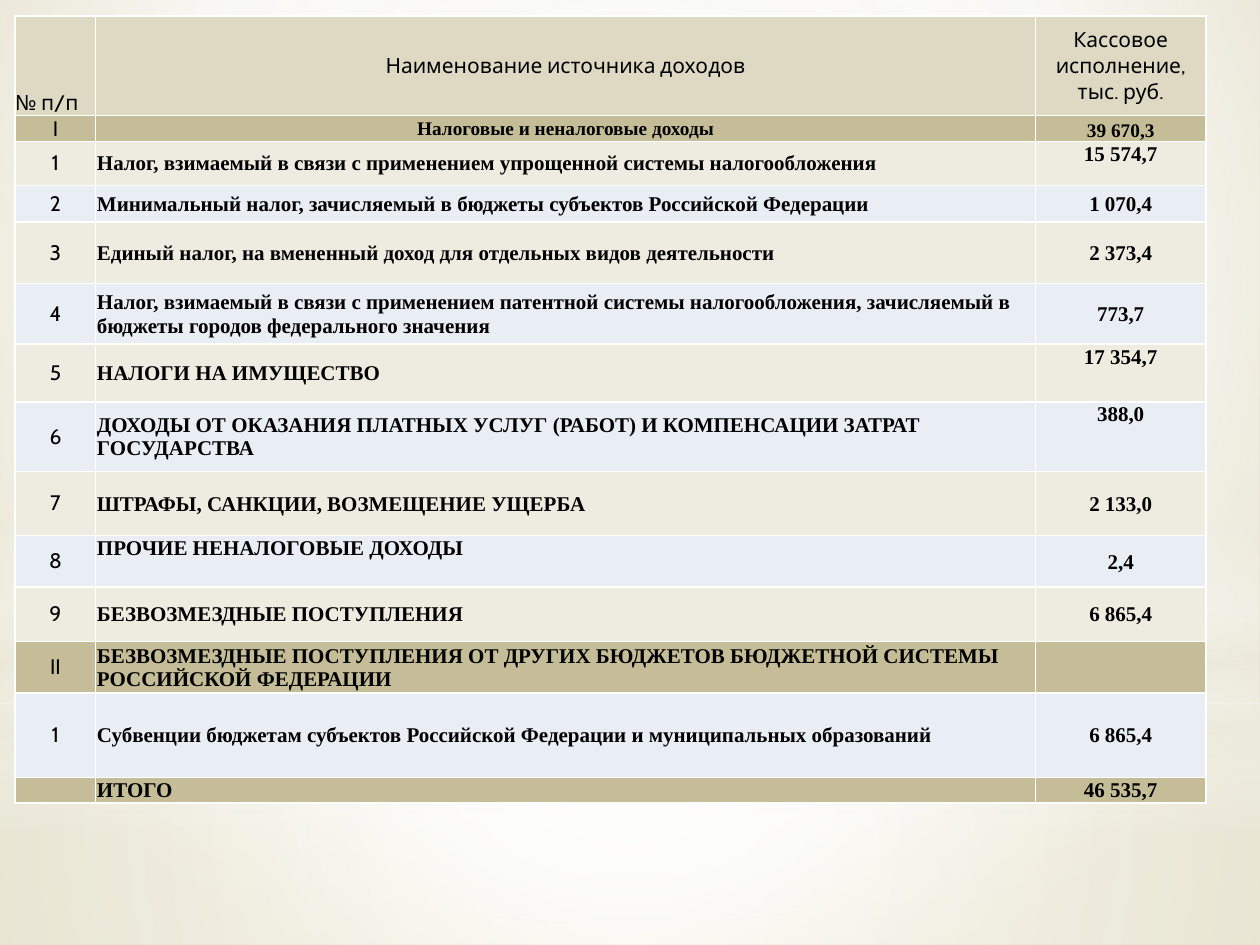
from typing import NamedTuple, Optional

from lxml.etree import SubElement
from pptx import Presentation
from pptx.dml.color import RGBColor
from pptx.enum.shapes import MSO_SHAPE
from pptx.enum.text import MSO_ANCHOR, PP_ALIGN
from pptx.oxml.ns import qn
from pptx.util import Inches, Pt

WHITE = RGBColor(0xFF, 0xFF, 0xFF)
BLACK = RGBColor(0x00, 0x00, 0x00)
IVORY = RGBColor(0xEE, 0xEC, 0xE1)
PALE_BLUE = RGBColor(0xE9, 0xED, 0xF4)
SAND = RGBColor(0xDD, 0xD9, 0xC3)
KHAKI = RGBColor(0xC4, 0xBD, 0x97)
LINEN = RGBColor(0xE7, 0xE4, 0xD4)
STRAW = RGBColor(0xD5, 0xCC, 0x9F)

SLIDE_WIDTH, SLIDE_HEIGHT = Inches(10), Inches(7.5)
TABLE_LEFT, TABLE_TOP = 0.012, 0.017
COLUMN_SHARES = (0.064, 0.746, 0.135)
LABEL_FONT, BODY_FONT = "Cabin", "Times New Roman"
LEFT, CENTER = PP_ALIGN.LEFT, PP_ALIGN.CENTER
TOP, MIDDLE, BOTTOM = MSO_ANCHOR.TOP, MSO_ANCHOR.MIDDLE, MSO_ANCHOR.BOTTOM


class Stop(NamedTuple):
    position: int
    color: RGBColor
    alpha: int = 100


class Glow(NamedTuple):
    outline: MSO_SHAPE
    top: float
    height: float
    stops: tuple[Stop, ...]
    focus: Optional[tuple[int, ...]] = (50, 50, 50, 50)


class Income(NamedTuple):
    height: float
    number: str
    title: str
    amount: str
    fill: RGBColor
    size: int = 12
    title_align: PP_ALIGN = LEFT
    number_anchor: MSO_ANCHOR = MIDDLE
    title_anchor: MSO_ANCHOR = MIDDLE
    amount_anchor: MSO_ANCHOR = MIDDLE


BACKDROP = (Stop(0, LINEN), Stop(60, WHITE), Stop(100, STRAW))
GLOWS = (
    Glow(MSO_SHAPE.RECTANGLE, 0.744, 0.256,
         (Stop(0, WHITE, 91), Stop(37, WHITE, 76), Stop(100, IVORY, 79))),
    Glow(MSO_SHAPE.RECTANGLE, 0, 0.744,
         (Stop(0, WHITE, 89), Stop(48, WHITE, 62), Stop(100, IVORY, 79))),
    Glow(MSO_SHAPE.RECTANGLE, 0.55, 0.333,
         (Stop(0, WHITE, 0), Stop(29, WHITE, 30), Stop(45, IVORY, 40),
          Stop(55, WHITE, 26), Stop(65, IVORY, 60), Stop(100, WHITE, 0)), None),
    Glow(MSO_SHAPE.OVAL, 0.233, 0.744, (Stop(0, WHITE), Stop(56, WHITE, 0))),
)

INCOMES = (
    Income(0.79, "№ п/п", "Наименование источника доходов",
           "Кассовое исполнение, тыс. руб.", SAND,
           title_align=CENTER, number_anchor=BOTTOM),
    Income(0.2, "I", "Налоговые и неналоговые доходы", "39 670,3", KHAKI,
           size=11, title_align=CENTER, amount_anchor=BOTTOM),
    Income(0.35, "1", "Налог, взимаемый в связи с применением упрощенной системы "
           "налогообложения", "15 574,7", IVORY, amount_anchor=TOP),
    Income(0.29, "2", "Минимальный налог, зачисляемый в бюджеты субъектов "
           "Российской Федерации", "1 070,4", PALE_BLUE),
    Income(0.49, "3", "Единый налог, на вмененный доход для отдельных видов "
           "деятельности", "2 373,4", IVORY),
    Income(0.48, "4", "Налог, взимаемый в связи с применением патентной системы "
           "налогообложения, зачисляемый в бюджеты городов федерального значения",
           "773,7", PALE_BLUE),
    Income(0.46, "5", "НАЛОГИ НА ИМУЩЕСТВО", "17 354,7", IVORY, amount_anchor=TOP),
    Income(0.55, "6", "ДОХОДЫ ОТ ОКАЗАНИЯ ПЛАТНЫХ УСЛУГ (РАБОТ) И КОМПЕНСАЦИИ "
           "ЗАТРАТ ГОСУДАРСТВА", "388,0", PALE_BLUE, amount_anchor=TOP),
    Income(0.51, "7", "ШТРАФЫ, САНКЦИИ, ВОЗМЕЩЕНИЕ УЩЕРБА", "2 133,0", IVORY),
    Income(0.41, "8", "ПРОЧИЕ НЕНАЛОГОВЫЕ ДОХОДЫ", "2,4", PALE_BLUE,
           title_anchor=TOP),
    Income(0.43, "9", "БЕЗВОЗМЕЗДНЫЕ ПОСТУПЛЕНИЯ", "6 865,4", IVORY),
    Income(0.41, "II", "БЕЗВОЗМЕЗДНЫЕ ПОСТУПЛЕНИЯ ОТ ДРУГИХ БЮДЖЕТОВ БЮДЖЕТНОЙ "
           "СИСТЕМЫ РОССИЙСКОЙ ФЕДЕРАЦИИ", "", KHAKI),
    Income(0.67, "1", "Субвенции бюджетам субъектов Российской Федерации и "
           "муниципальных образований", "6 865,4", PALE_BLUE),
    Income(0.2, "", "ИТОГО", "46 535,7", KHAKI),
)


def add_color(parent, color: RGBColor, alpha: int = 100) -> None:
    tint = SubElement(parent, qn("a:srgbClr"), val=str(color))
    if alpha < 100:
        SubElement(tint, qn("a:alpha"), val=str(alpha * 1000))


def apply_gradient(properties, stops: tuple[Stop, ...], focus) -> None:
    gradient = SubElement(properties, qn("a:gradFill"), rotWithShape="1")
    properties.replace(properties.find(qn("a:solidFill")), gradient)
    stop_list = SubElement(gradient, qn("a:gsLst"))
    for stop in stops:
        mark = SubElement(stop_list, qn("a:gs"), pos=str(stop.position * 1000))
        add_color(mark, stop.color, stop.alpha)
    if focus is None:
        SubElement(gradient, qn("a:lin"), ang="5400000", scaled="0")
    else:
        circle = SubElement(gradient, qn("a:path"), path="circle")
        sides = {side: str(share * 1000) for side, share in zip("ltrb", focus)}
        SubElement(circle, qn("a:fillToRect"), **sides)


def draw_glow(slide, glow: Glow) -> None:
    shape = slide.shapes.add_shape(
        glow.outline, 0, int(SLIDE_HEIGHT * glow.top),
        SLIDE_WIDTH, int(SLIDE_HEIGHT * glow.height))
    shape.shadow.inherit = False
    shape.line.fill.background()
    shape.fill.solid()
    apply_gradient(shape._element.spPr, glow.stops, glow.focus)


def add_borders(cell) -> None:
    properties = cell._tc.get_or_add_tcPr()
    for index, side in enumerate(("lnL", "lnR", "lnT", "lnB")):
        border = SubElement(properties, qn(f"a:{side}"), w=str(Pt(1)))
        add_color(SubElement(border, qn("a:solidFill")), WHITE)
        properties.insert(index, border)


def fill_cell(cell, text: str, fill: RGBColor, font_name: str, size: int,
              align: PP_ALIGN, anchor: MSO_ANCHOR) -> None:
    is_body = font_name == BODY_FONT
    inset = Inches(0.01) if is_body else 0
    cell.margin_left = cell.margin_right = cell.margin_top = inset
    cell.margin_bottom = 0
    cell.vertical_anchor = anchor
    cell.fill.solid()
    cell.fill.fore_color.rgb = fill
    add_borders(cell)
    paragraph = cell.text_frame.paragraphs[0]
    paragraph.text = text
    paragraph.alignment = align
    for run in paragraph.runs:
        run.font.name = font_name
        run.font.size = Pt(size)
        run.font.bold = is_body
        run.font.color.rgb = BLACK
    if not text:
        SubElement(paragraph._p, qn("a:endParaRPr"), sz=str(size * 100))


def draw_incomes(slide) -> None:
    widths = [int(SLIDE_WIDTH * share) for share in COLUMN_SHARES]
    heights = [Inches(income.height) for income in INCOMES]
    table = slide.shapes.add_table(
        len(INCOMES), len(widths), int(SLIDE_WIDTH * TABLE_LEFT),
        int(SLIDE_HEIGHT * TABLE_TOP), sum(widths), sum(heights)).table
    table.first_row = table.horz_banding = False
    for column, width in zip(table.columns, widths):
        column.width = width
    for index, (row, income) in enumerate(zip(table.rows, INCOMES)):
        row.height = heights[index]
        body_font = BODY_FONT if index else LABEL_FONT
        number_align = CENTER if index else LEFT
        number, title, amount = row.cells
        fill_cell(number, income.number, income.fill, LABEL_FONT, 12,
                  number_align, income.number_anchor)
        fill_cell(title, income.title, income.fill, body_font, income.size,
                  income.title_align, income.title_anchor)
        fill_cell(amount, income.amount, income.fill, body_font, income.size,
                  CENTER, income.amount_anchor)


def main() -> None:
    presentation = Presentation()
    presentation.slide_width, presentation.slide_height = SLIDE_WIDTH, SLIDE_HEIGHT
    slide = presentation.slides.add_slide(presentation.slide_layouts[6])
    slide.background.fill.solid()
    backdrop = slide._element.find(f".//{qn('p:bgPr')}")
    apply_gradient(backdrop, BACKDROP, (20, 10, 20, 60))
    for glow in GLOWS:
        draw_glow(slide, glow)
    draw_incomes(slide)
    presentation.save("out.pptx")


if __name__ == "__main__":
    main()
